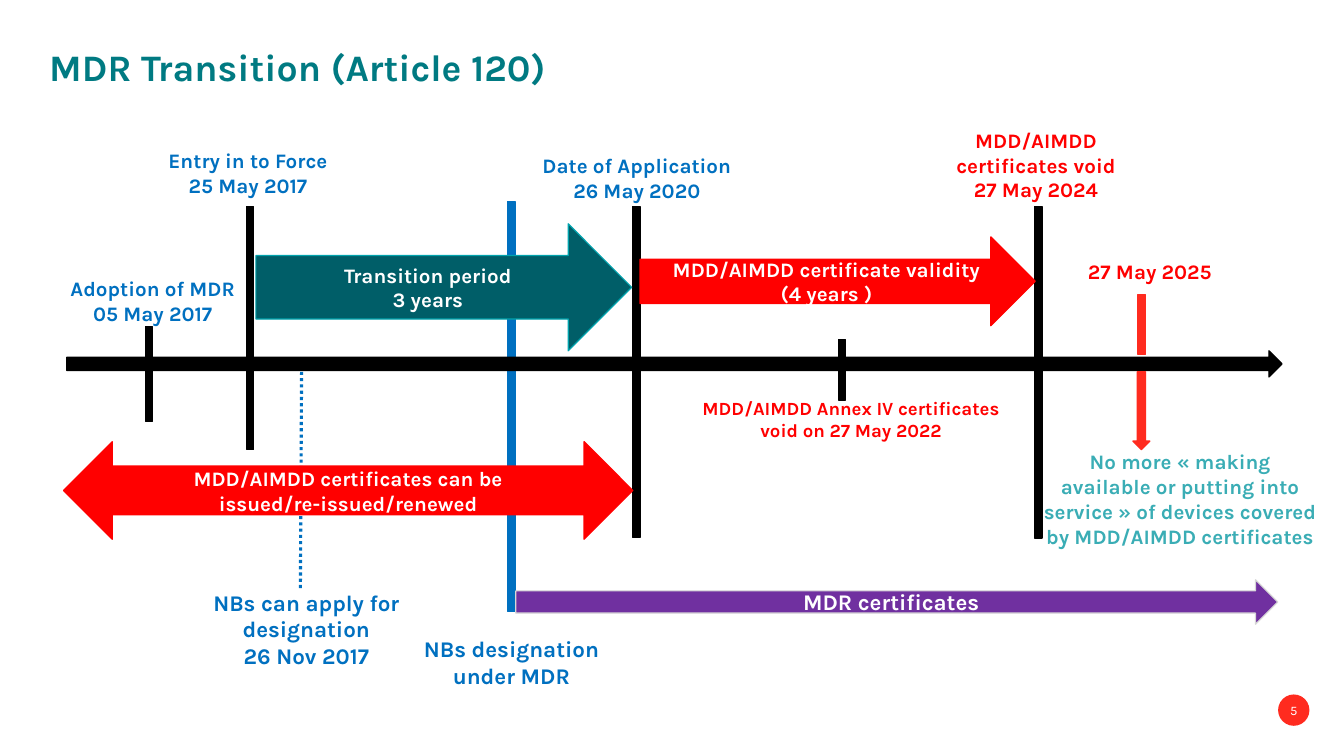
from lxml import etree
from pptx import Presentation
from pptx.dml.color import RGBColor
from pptx.enum.dml import MSO_LINE
from pptx.enum.shapes import MSO_CONNECTOR, MSO_SHAPE
from pptx.enum.text import MSO_ANCHOR, MSO_AUTO_SIZE, PP_ALIGN
from pptx.oxml.ns import qn
from pptx.util import Cm, Pt

RECT, OVAL = MSO_SHAPE.RECTANGLE, MSO_SHAPE.OVAL
RIGHT, DOWN = MSO_SHAPE.RIGHT_ARROW, MSO_SHAPE.DOWN_ARROW
BOTH = MSO_SHAPE.LEFT_RIGHT_ARROW
STRAIGHT, DOTTED = MSO_CONNECTOR.STRAIGHT, MSO_LINE.ROUND_DOT
TOP, MIDDLE = MSO_ANCHOR.TOP, MSO_ANCHOR.MIDDLE
LEFT, CENTER = PP_ALIGN.LEFT, PP_ALIGN.CENTER
NO_FIT = MSO_AUTO_SIZE.NONE

FONT = "Karla"
COLORS = {
    "title": "007A82", "blue": "0070C0", "black": "000000", "white": "FFFFFF",
    "red": "FF0000", "signal": "FF2B1F", "purple": "7030A0", "grey": "D7D7D7",
    "petrol": "005E68", "teal": "00A3AD", "aqua": "3AADB5",
}
BAR = 0.18          # width of a date marker, cm
AXIS_DROP = 6.17    # from the top of the timeline box to its axis, cm

# All x are from the left of the timeline box, all y from its axis.
# x, top, bottom, colour
MARKERS = [
    (2.07, -0.94, 1.45, "black"),
    (4.63, -3.96, 2.16, "black"),
    (14.36, -3.96, 4.37, "black"),
    (19.54, -0.61, 0.91, "black"),
    (24.49, -3.96, 4.39, "black"),
    (27.09, -1.75, -0.23, "signal"),
]
# shape, left, top, width, height, fill, line, size, lines
PERIODS = [
    (RIGHT, 14.45, -3.2, 9.96, 2.24, "red", "red", 14.7,
     ["MDD/AIMDD certificate validity", "(4 years )"]),
    (BOTH, -0.08, 1.96, 14.35, 2.46, "red", "red", 14.7,
     ["MDD/AIMDD certificates can be issued/re-issued/renewed"]),
    (RIGHT, 11.32, 5.44, 19.2, 1.12, "purple", "grey", 16,
     ["MDR certificates"]),
    (RIGHT, 4.77, -3.53, 9.47, 3.2, "petrol", "teal", 14.7,
     ["Transition period", "3 years"]),
]
# centre, top, width, height, colour, size, lines
LABELS = [
    (2.17, -2.34, 4.95, 1.5, "blue", 14.7, ["Adoption of MDR", "05 May 2017"]),
    (4.57, -5.56, 4.98, 1.5, "blue", 14.7, ["Entry in to Force", "25 May 2017"]),
    (14.37, -5.44, 6.5, 1.5, "blue", 14.7, ["Date of Application", "26 May 2020"]),
    (24.43, -6.07, 6.5, 2.13, "red", 14.7,
     ["MDD/AIMDD certificates void", "27 May 2024"]),
    (27.3, -2.77, 5.18, 0.89, "red", 14.7, ["27 May 2025"]),
    (19.77, 0.71, 8.26, 1.4, "red", 13.3,
     ["MDD/AIMDD Annex IV certificates void on 27 May 2022"]),
    (28.06, 2.03, 7.37, 3.38, "aqua", 14.7,
     ["No more « making available or putting into service » "
      "of devices covered by MDD/AIMDD certificates"]),
    (6.04, 5.54, 5.74, 3, "blue", 16,
     ["NBs can apply for designation", "26 Nov 2017"]),
    (11.21, 6.71, 6.48, 1.63, "blue", 16, ["NBs designation", "under MDR"]),
]


def rgb(name):
    return RGBColor.from_string(COLORS[name])


def write(shape, lines, *, size, color, bold=True, align=CENTER, anchor=TOP,
          inset=None, spacing=None):
    frame = shape.text_frame
    frame.word_wrap = True
    frame.auto_size = NO_FIT
    frame.vertical_anchor = anchor
    if inset is not None:
        frame.margin_left = frame.margin_right = Cm(inset)
        frame.margin_top = frame.margin_bottom = Cm(inset)
    for number, line in enumerate(lines):
        para = frame.add_paragraph() if number else frame.paragraphs[0]
        para.alignment = align
        if spacing:
            para.line_spacing = spacing
        span = para.add_run()
        span.text = line
        span.font.name = FONT
        span.font.size = Pt(size)
        span.font.bold = bold
        span.font.color.rgb = rgb(color)


def add_block(page, kind, left, top, width, height, fill, line=None):
    block = page.shapes.add_shape(kind, Cm(left), Cm(top), Cm(width), Cm(height))
    block.shadow.inherit = False
    block.fill.solid()
    block.fill.fore_color.rgb = rgb(fill)
    block.line.color.rgb = rgb(line or fill)
    block.line.width = Pt(0.85)
    return block


def add_marker(page, x, top, bottom, color):
    add_block(page, RECT, x - BAR / 2, top, BAR, bottom - top, color)


def add_title(page, left, top, width, height):
    title = page.shapes.title
    title.left, title.top = Cm(left), Cm(top)
    title.width, title.height = Cm(width), Cm(height)
    write(title, ["MDR Transition (Article 120)"], size=26.7, color="title",
          align=LEFT, inset=0, spacing=0.9)


def add_page_number(page, left, top, side):
    badge = add_block(page, OVAL, left, top, side, side, "signal")
    badge.line.fill.background()
    write(badge, ["5"], size=9.3, color="white", bold=False, anchor=MIDDLE, inset=0)


def add_axis(page, left, axis, width):
    """Draw the time axis with its date markers and designation lines."""
    dotted = page.shapes.add_connector(STRAIGHT, Cm(left + 5.92), Cm(axis + 0.2),
                                       Cm(left + 5.89), Cm(axis + 5.66))
    dotted.line.color.rgb = rgb("blue")
    dotted.line.width = Pt(2.25)
    dotted.line.dash_style = DOTTED
    etree.SubElement(dotted.element.spPr, qn("a:effectLst"))
    add_marker(page, left + 11.21, axis - 4.09, axis + 6.25, "blue")
    add_block(page, RIGHT, left, axis - 0.33, width, 0.66, "black")
    for x, top, bottom, color in MARKERS:
        add_marker(page, left + x, axis + top, axis + bottom, color)
    add_block(page, DOWN, left + 26.87, axis + 0.2, 0.43, 1.96, "signal")


def add_periods(page, left, axis):
    for kind, x, y, width, height, fill, line, size, lines in PERIODS:
        arrow = add_block(page, kind, left + x, axis + y, width, height, fill, line)
        write(arrow, lines, size=size, color="white", anchor=MIDDLE)


def add_labels(page, left, axis):
    for center, y, width, height, color, size, lines in LABELS:
        box = page.shapes.add_textbox(Cm(left + center - width / 2), Cm(axis + y),
                                      Cm(width), Cm(height))
        write(box, lines, size=size, color=color)


def add_timeline(page, left, top, width):
    axis = top + AXIS_DROP
    add_axis(page, left, axis, width)
    add_periods(page, left, axis)
    add_labels(page, left, axis)


def main():
    deck = Presentation()
    deck.slide_width, deck.slide_height = Cm(33.87), Cm(19.05)
    page = deck.slides.add_slide(deck.slide_layouts[5])
    add_title(page, 1.24, 1.24, 31.37, 1.19)
    add_timeline(page, 1.68, 3, 30.63)
    add_page_number(page, 32.21, 17.5, 0.79)
    deck.save("out.pptx")


if __name__ == "__main__":
    main()
